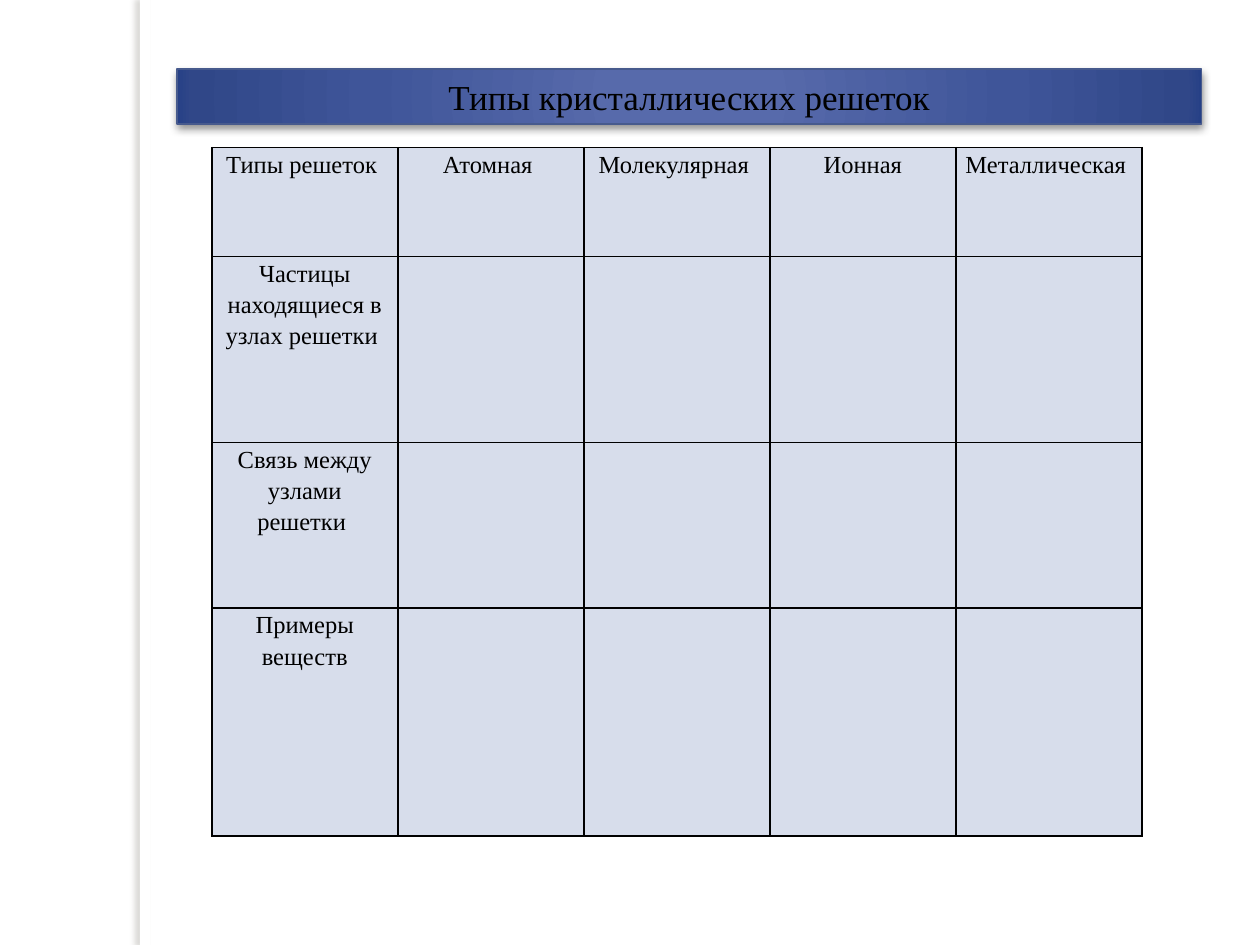
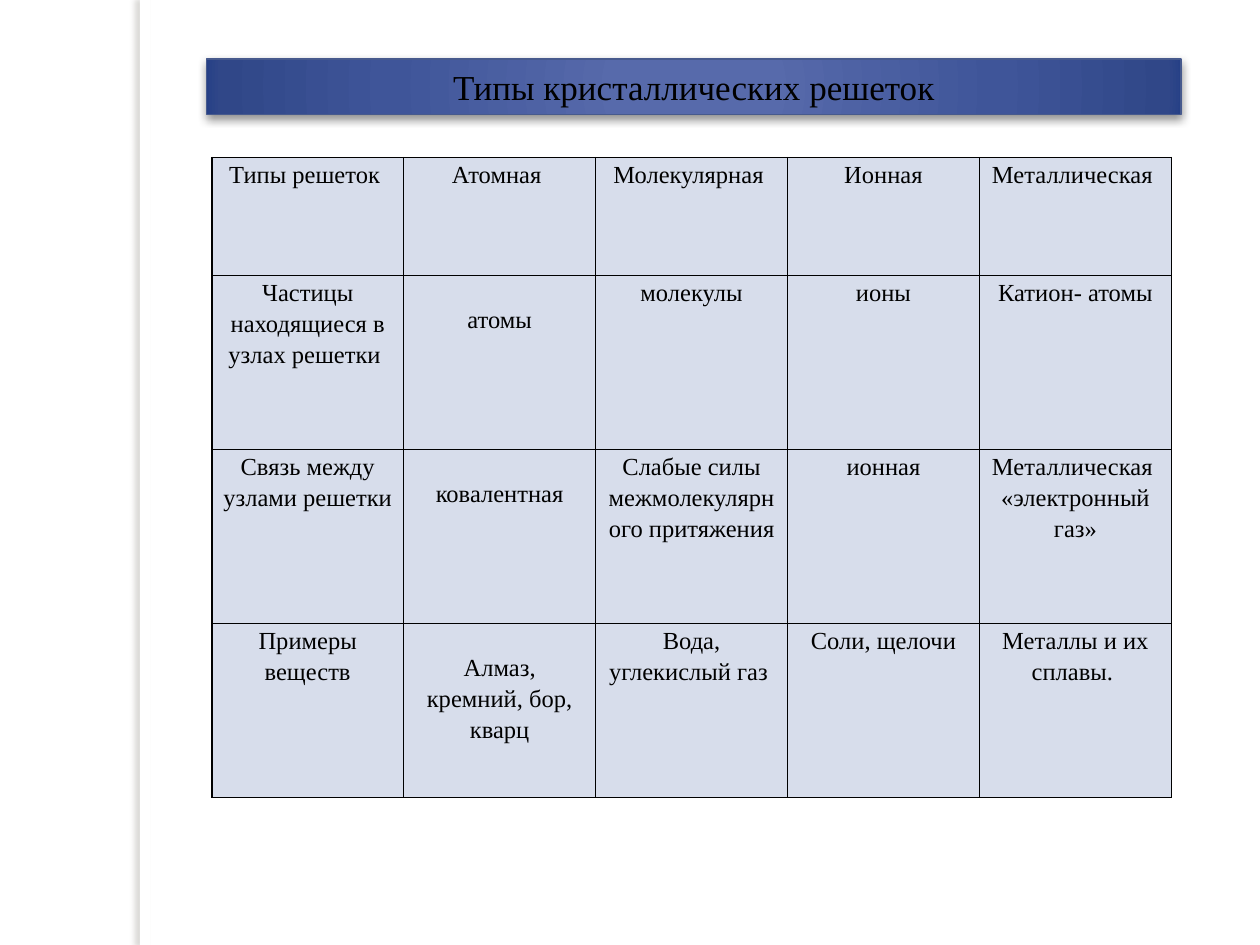
import lxml.etree
import pptx
import pptx.dml.color
import pptx.enum.shapes
import pptx.enum.text
import pptx.oxml.ns
import pptx.util

Pt = pptx.util.Pt
CENTER = pptx.enum.text.PP_ALIGN.CENTER
MIDDLE = pptx.enum.text.MSO_ANCHOR.MIDDLE

SLIDE_WIDTH, SLIDE_HEIGHT = 720, 540
FONT = "Times New Roman"
BLACK, WHITE, CELL_FILL, TITLE_LINE = "000000", "FFFFFF", "D7DDEB", "475A8D"
TITLE_STOPS = [(0, "576BAC"), (15, "576AAB"), (62, "3F5599"), (97, "304788"), (100, "264086")]
TITLE_SHADOW = {"hex_code": BLACK, "opacity": 43, "blur": 5, "distance": 2, "angle": 90}
STRIP_SHADOW = {"hex_code": "736F63", "opacity": 25, "blur": 3, "distance": 3, "angle": 180}
CELL_FORMAT = {"margin_left": Pt(5.4), "margin_right": Pt(5.4), "margin_top": 0, "margin_bottom": 0}
LOWERED_TEXT = {"margin_top": Pt(15.5)}

TITLE = "Типы кристаллических решеток"
HEADINGS = ["Типы решеток ", "Атомная ", "Молекулярная ", " Ионная ", "Металлическая "]
QUESTIONS = ["Частицы находящиеся в узлах решетки ", "Связь между узлами решетки ", "Примеры веществ"]
ANSWERS = [
    ["атомы", "молекулы", "ионы", "Катион- атомы"],
    ["ковалентная", "Слабые силы межмолекулярного притяжения", "ионная",
     "Металлическая \n«электронный газ»"],
    ["Алмаз, кремний, бор, кварц", "Вода, углекислый газ ", "Соли, щелочи", "Металлы и их сплавы. "],
]
BLANK_ANSWERS = [[""] * 4] * 3


def color(hex_code):
    return pptx.dml.color.RGBColor.from_string(hex_code)


def apply_format(target, values):
    for name, value in values.items():
        setattr(target, name, value)


def add_xml(parent, tag, **attributes):
    """Append a DrawingML element with the given attributes."""
    element = lxml.etree.SubElement(parent, pptx.oxml.ns.qn(tag))
    for name, value in attributes.items():
        element.set(name, str(value))
    return element


def add_rectangle(slide, left, top, width, height):
    return slide.shapes.add_shape(
        pptx.enum.shapes.MSO_SHAPE.RECTANGLE, Pt(left), Pt(top), Pt(width), Pt(height))


def add_shadow(shape, hex_code, opacity, blur, distance, angle):
    shape.shadow.inherit = False
    effects = shape.element.spPr.find(pptx.oxml.ns.qn("a:effectLst"))
    shadow = add_xml(effects, "a:outerShdw", blurRad=Pt(blur), dist=Pt(distance),
                     dir=angle * 60000, rotWithShape=0)
    shade = add_xml(shadow, "a:srgbClr", val=hex_code)
    add_xml(shade, "a:alpha", val=opacity * 1000)


def add_radial_fill(shape, stops):
    properties = shape.element.spPr
    gradient = add_xml(properties, "a:gradFill", rotWithShape=1)
    stop_list = add_xml(gradient, "a:gsLst")
    for position, hex_code in stops:
        stop = add_xml(stop_list, "a:gs", pos=position * 1000)
        add_xml(stop, "a:srgbClr", val=hex_code)
    circle = add_xml(gradient, "a:path", path="circle")
    add_xml(circle, "a:fillToRect", l=50000, t=50000, r=50000, b=50000)
    properties.find(pptx.oxml.ns.qn("a:prstGeom")).addnext(gradient)


def write_text(frame, text, size, line_spacing):
    frame.text = text
    for para in frame.paragraphs:
        apply_format(para, {"alignment": CENTER, "line_spacing": line_spacing})
        for span in para.runs:
            apply_format(span.font, {"name": FONT, "size": Pt(size)})
            span.font.color.rgb = color(BLACK)


def add_side_strip(slide):
    strip = add_rectangle(slide, 80, 0, 5.75, SLIDE_HEIGHT)
    strip.fill.solid()
    strip.fill.fore_color.rgb = color(WHITE)
    strip.line.fill.background()
    add_shadow(strip, **STRIP_SHADOW)


def add_title_band(slide, left, top, width):
    band = add_rectangle(slide, left, top, width, 31.5)
    add_radial_fill(band, TITLE_STOPS)
    band.line.color.rgb = color(TITLE_LINE)
    band.line.width = Pt(0.75)
    add_shadow(band, **TITLE_SHADOW)
    apply_format(band.text_frame, {"word_wrap": True, "vertical_anchor": MIDDLE})
    write_text(band.text_frame, TITLE, 20, 1.0)


def style_cell(cell):
    apply_format(cell, CELL_FORMAT)
    properties = cell._tc.get_or_add_tcPr()
    for side in "LRTB":
        border = add_xml(properties, f"a:ln{side}", w=Pt(1))
        add_xml(add_xml(border, "a:solidFill"), "a:srgbClr", val=BLACK)
    cell.fill.solid()
    cell.fill.fore_color.rgb = color(CELL_FILL)


def add_lattice_table(slide, top, column_width, row_heights, answers):
    rows = [HEADINGS] + [[question, *line] for question, line in zip(QUESTIONS, answers)]
    table = slide.shapes.add_table(
        len(rows), len(HEADINGS), Pt(121), Pt(top),
        Pt(column_width * len(HEADINGS)), Pt(sum(row_heights))).table
    apply_format(table, {"first_row": False, "horz_banding": False})
    for column in table.columns:
        column.width = Pt(column_width)
    for row_index, (texts, height) in enumerate(zip(rows, row_heights)):
        table.rows[row_index].height = Pt(height)
        for column_index, text in enumerate(texts):
            cell = table.cell(row_index, column_index)
            style_cell(cell)
            if text:
                write_text(cell.text_frame, text, 14, 1.15)
            if text and row_index > 0 and column_index == 1:
                apply_format(cell, LOWERED_TEXT)


def add_lattice_slide(deck, table_format, title_format):
    slide = deck.slides.add_slide(deck.slide_layouts[6])
    add_side_strip(slide)
    add_lattice_table(slide, **table_format)
    add_title_band(slide, **title_format)


def main():
    deck = pptx.Presentation()
    apply_format(deck, {"slide_width": Pt(SLIDE_WIDTH), "slide_height": Pt(SLIDE_HEIGHT)})
    add_lattice_slide(
        deck,
        {"top": 84.3, "column_width": 106.3, "row_heights": [62.2, 106.5, 94.5, 130.3],
         "answers": BLANK_ANSWERS},
        {"left": 101.2, "top": 39.4, "width": 585.4})
    add_lattice_slide(
        deck,
        {"top": 90, "column_width": 109.7, "row_heights": [67.5] + [99.4] * 3, "answers": ANSWERS},
        {"left": 118.1, "top": 33.8, "width": 556.9})
    deck.save("out.pptx")


if __name__ == "__main__":
    main()
